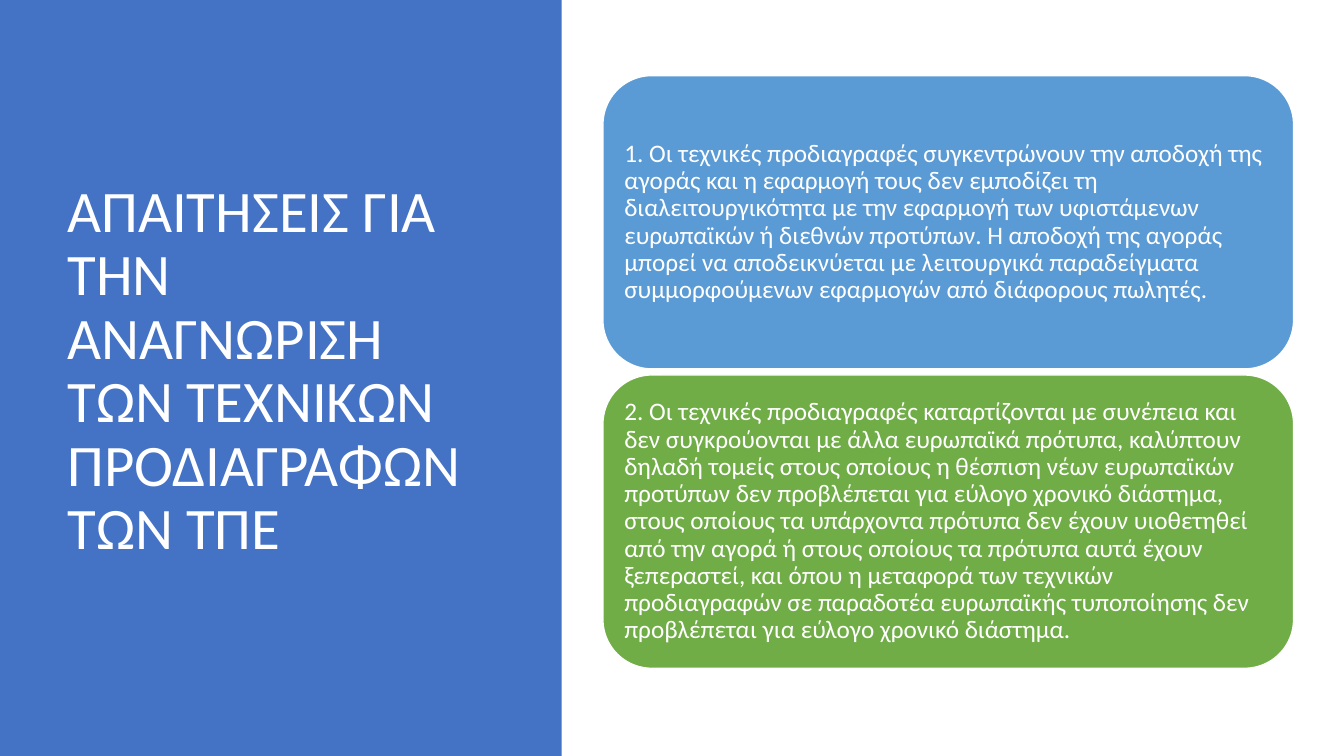
from pptx import Presentation
from pptx.dml.color import RGBColor
from pptx.enum import shapes, text
from pptx.util import Inches, Pt

# Content
TITLE = "ΑΠΑΙΤΗΣΕΙΣ ΓΙΑ ΤΗΝ ΑΝΑΓΝΩΡΙΣΗ ΤΩΝ ΤΕΧΝΙΚΩΝ ΠΡΟΔΙΑΓΡΑΦΩΝ ΤΩΝ ΤΠΕ"
RULES = [
    ("blue",
     "1. Οι τεχνικές προδιαγραφές συγκεντρώνουν την αποδοχή της αγοράς και η "
     "εφαρμογή τους δεν εμποδίζει τη διαλειτουργικότητα με την εφαρμογή των "
     "υφιστάμενων ευρωπαϊκών ή διεθνών προτύπων. Η αποδοχή της αγοράς μπορεί "
     "να αποδεικνύεται με λειτουργικά παραδείγματα συμμορφούμενων εφαρμογών "
     "από διάφορους πωλητές."),
    ("green",
     "2. Οι τεχνικές προδιαγραφές καταρτίζονται με συνέπεια και δεν "
     "συγκρούονται με άλλα ευρωπαϊκά πρότυπα, καλύπτουν δηλαδή τομείς στους "
     "οποίους η θέσπιση νέων ευρωπαϊκών προτύπων δεν προβλέπεται για εύλογο "
     "χρονικό διάστημα, στους οποίους τα υπάρχοντα πρότυπα δεν έχουν "
     "υιοθετηθεί από την αγορά ή στους οποίους τα πρότυπα αυτά έχουν "
     "ξεπεραστεί, και όπου η μεταφορά των τεχνικών προδιαγραφών σε παραδοτέα "
     "ευρωπαϊκής τυποποίησης δεν προβλέπεται για εύλογο χρονικό διάστημα."),
]

THEME = {
    "font": "Calibri", "title": 42, "body": 18,
    "panel": "4472C4", "blue": "5B9BD5", "green": "70AD47", "white": "FFFFFF",
}


def tint(name):
    return RGBColor.from_string(THEME[name])


def block(slide, kind, box, fill):
    shape = slide.shapes.add_shape(kind, *map(Inches, box))
    shape.shadow.inherit = False
    shape.fill.solid()
    shape.fill.fore_color.rgb = tint(fill)
    shape.line.fill.background()
    return shape


def write(shape, words, size):
    frame = shape.text_frame
    frame.word_wrap = True
    frame.vertical_anchor = text.MSO_ANCHOR.MIDDLE
    frame.text = words
    para = frame.paragraphs[0]
    para.alignment = text.PP_ALIGN.LEFT
    para.line_spacing = 0.9
    font = para.runs[0].font
    font.name = THEME["font"]
    font.size = Pt(THEME[size])
    font.color.rgb = tint("white")


def main():
    deck = Presentation()
    deck.slide_width, deck.slide_height = Inches(13.33), Inches(7.5)
    slide = deck.slides.add_slide(deck.slide_layouts[6])

    # Title panel
    block(slide, shapes.MSO_SHAPE.RECTANGLE, (0, 0, 5.57, 7.5), "panel")
    title = slide.shapes.add_textbox(*map(Inches, (0.57, 0.68, 4.16, 6.02)))
    write(title, TITLE, "title")

    # Stacked rule cards
    left, top, width, height, gap = 5.98, 0.75, 6.85, 2.91, 0.06
    for row, (fill, words) in enumerate(RULES):
        box = (left, top + row * (height + gap), width, height)
        card = block(slide, shapes.MSO_SHAPE.ROUNDED_RECTANGLE, box, fill)
        card.line.color.rgb = tint("white")
        card.line.width = Pt(1)
        frame = card.text_frame
        frame.margin_left = frame.margin_right = Inches(0.07)
        frame.margin_top = frame.margin_bottom = Inches(0.07)
        write(card, words, "body")

    deck.save("out.pptx")


if __name__ == "__main__":
    main()
